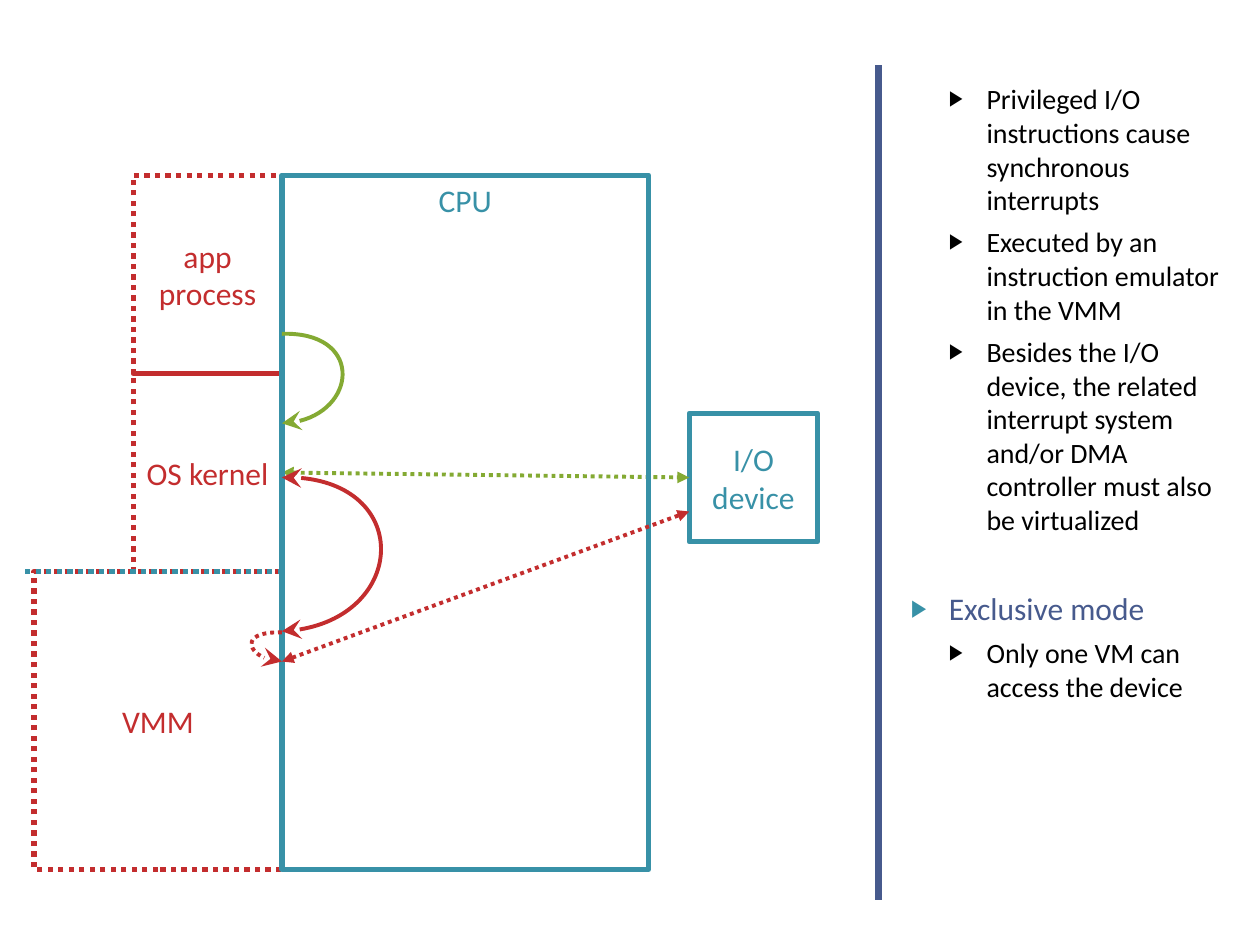
from lxml.etree import SubElement
from pptx import Presentation
from pptx.dml.color import RGBColor
from pptx.enum.dml import MSO_LINE
from pptx.enum.shapes import MSO_CONNECTOR, MSO_SHAPE
from pptx.enum.text import MSO_ANCHOR, MSO_AUTO_SIZE, PP_ALIGN
from pptx.oxml.ns import qn
from pptx.util import Inches, Pt

TEAL, RED, GREEN, NAVY, BLACK = "3891A7", "C32D2E", "84AA33", "475A8D", "000000"

# The stack of software layers and the CPU share a grid of 14 rows.
TOP, LEFT, CPU_HEIGHT = 1.39, 0.27, 5.51
UNIT = CPU_HEIGHT / 14
CPU_LEFT = LEFT + 5 * UNIT
DEVICE_LEFT, DEVICE_SIDE = 5.47, 1.02

# label, colour, left, first row, width, rows, dotted, anchor
LAYERS = [
    ("app process", RED, LEFT + 2 * UNIT, 0, 3 * UNIT, 4, True, MSO_ANCHOR.MIDDLE),
    ("OS kernel", RED, LEFT + 2 * UNIT, 4, 3 * UNIT, 4, True, MSO_ANCHOR.MIDDLE),
    ("VMM", RED, LEFT, 8, 5 * UNIT, 6, True, MSO_ANCHOR.MIDDLE),
    ("CPU", TEAL, CPU_LEFT, 0, 2.91, 14, False, MSO_ANCHOR.TOP),
]

# text, level, space before in points
NOTES = [
    ("Privileged I/O instructions cause synchronous interrupts", 1, 5),
    ("Executed by an instruction emulator in the VMM", 1, 5),
    ("Besides the I/O device, the related interrupt system and/or DMA "
     "controller must also be virtualized", 1, 5),
    ("Exclusive mode", 0, 30.5),
    ("Only one VM can access the device", 1, 5),
]
# size, text colour, bullet colour for each level
NOTE_STYLES = [(18, NAVY, TEAL), (16, BLACK, BLACK)]
ARROW_SIZES = {"triangle": "med", "stealth": "lg"}


def rgb(value):
    return RGBColor.from_string(value)


def set_all(target, **values):
    for name, value in values.items():
        setattr(target, name, value)


def style_line(shape, color, width, dotted=False, head=None, tail=None):
    line = shape.line
    line.color.rgb = rgb(color)
    line.width = Pt(width)
    if dotted:
        line.dash_style = MSO_LINE.ROUND_DOT
    for tag, kind in (("a:headEnd", head), ("a:tailEnd", tail)):
        if kind:
            size = ARROW_SIZES[kind]
            SubElement(line._get_or_add_ln(), qn(tag), type=kind, w=size, len=size)


def add_box(slide, label, color, left, top, width, height,
            dotted=False, anchor=MSO_ANCHOR.MIDDLE):
    box = slide.shapes.add_shape(
        MSO_SHAPE.RECTANGLE, *map(Inches, (left, top, width, height)))
    box.shadow.inherit = False
    box.fill.background()
    style_line(box, color, 3, dotted)
    set_all(box.text_frame, text=label, word_wrap=True, vertical_anchor=anchor,
            margin_left=Inches(0.05), margin_right=Inches(0.05))
    paragraph = box.text_frame.paragraphs[0]
    paragraph.alignment = PP_ALIGN.CENTER
    set_all(paragraph.font, name="Calibri", size=Pt(18))
    paragraph.font.color.rgb = rgb(color)


def add_straight(slide, start, end, color, width, **line_format):
    link = slide.shapes.add_connector(
        MSO_CONNECTOR.STRAIGHT, *map(Inches, (*start, *end)))
    SubElement(link._element.spPr, qn("a:effectLst"))
    style_line(link, color, width, **line_format)


def add_curve(slide, points, color, **line_format):
    """Draw one cubic curve from its start, two control points and end."""
    start, *others = [(Inches(x), Inches(y)) for x, y in points]
    builder = slide.shapes.build_freeform(*start)
    builder.add_line_segments(others, close=False)
    curve = builder.convert_to_shape()
    outline = curve._element.spPr.find(".//" + qn("a:path"))
    segments = outline.findall(qn("a:lnTo"))
    cubic = SubElement(outline, qn("a:cubicBezTo"))
    for segment in segments:
        cubic.append(segment[0])
        outline.remove(segment)
    curve.shadow.inherit = False
    curve.fill.background()
    style_line(curve, color, 2.25, **line_format)


def add_bullet(paragraph, level, color):
    properties = paragraph._p.get_or_add_pPr()
    properties.set("marL", str(Inches(0.3 * (level + 1))))
    properties.set("indent", str(Inches(-0.3)))
    bullet_color = SubElement(properties, qn("a:buClr"))
    SubElement(bullet_color, qn("a:srgbClr"), val=color)
    SubElement(properties, qn("a:buSzPct"), val="76000")
    SubElement(properties, qn("a:buChar"), char="▶")


def fill_notes(body):
    set_all(body, left=Inches(7.13), top=Inches(0.6),
            width=Inches(2.68), height=Inches(6.46))
    frame = body.text_frame
    set_all(frame, word_wrap=True, auto_size=MSO_AUTO_SIZE.NONE,
            vertical_anchor=MSO_ANCHOR.TOP)
    for index, (text, level, space) in enumerate(NOTES):
        paragraph = frame.add_paragraph() if index else frame.paragraphs[0]
        size, color, bullet_color = NOTE_STYLES[level]
        set_all(paragraph, level=level, space_before=Pt(space),
                alignment=PP_ALIGN.LEFT)
        add_bullet(paragraph, level, bullet_color)
        run = paragraph.add_run()
        run.text = text
        set_all(run.font, name="Calibri", size=Pt(size))
        run.font.color.rgb = rgb(color)


def add_layers(slide):
    for label, color, left, row, width, rows, dotted, anchor in LAYERS:
        add_box(slide, label, color, left, TOP + row * UNIT, width,
                rows * UNIT, dotted, anchor)
    boundary = TOP + 8 * UNIT
    add_straight(slide, (0.2, boundary), (CPU_LEFT, boundary), TEAL, 3, dotted=True)


def add_control_flow(slide):
    x = CPU_LEFT
    add_curve(slide, [(x, 3.79), (3.27, 3.75), (3.21, 4.98), (x, 5.01)], RED,
              head="stealth", tail="stealth")
    add_straight(slide, (x, 5.25), (DEVICE_LEFT, 4.06), RED, 2.25,
                 dotted=True, head="triangle", tail="triangle")
    add_curve(slide, [(x, 5.02), (1.93, 5.01), (1.95, 5.24), (x, 5.25)], RED,
              dotted=True, tail="stealth")
    add_curve(slide, [(x, 2.65), (2.87, 2.63), (2.84, 3.34), (x, 3.36)], GREEN,
              tail="stealth")


def main():
    deck = Presentation()
    set_all(deck, slide_width=Inches(10), slide_height=Inches(7.5))
    slide = deck.slides.add_slide(deck.slide_layouts[1])
    title = slide.shapes.title._element
    title.getparent().remove(title)
    fill_notes(slide.placeholders[1])
    add_straight(slide, (6.97, 0.52), (6.97, 7.14), NAVY, 4)
    add_box(slide, "I/O device", TEAL, DEVICE_LEFT, 3.28, DEVICE_SIDE, DEVICE_SIDE)
    add_straight(slide, (CPU_LEFT, 3.75), (DEVICE_LEFT, 3.79), GREEN, 2.25,
                 dotted=True, head="triangle", tail="triangle")
    add_layers(slide)
    add_control_flow(slide)
    deck.save("out.pptx")


if __name__ == "__main__":
    main()
